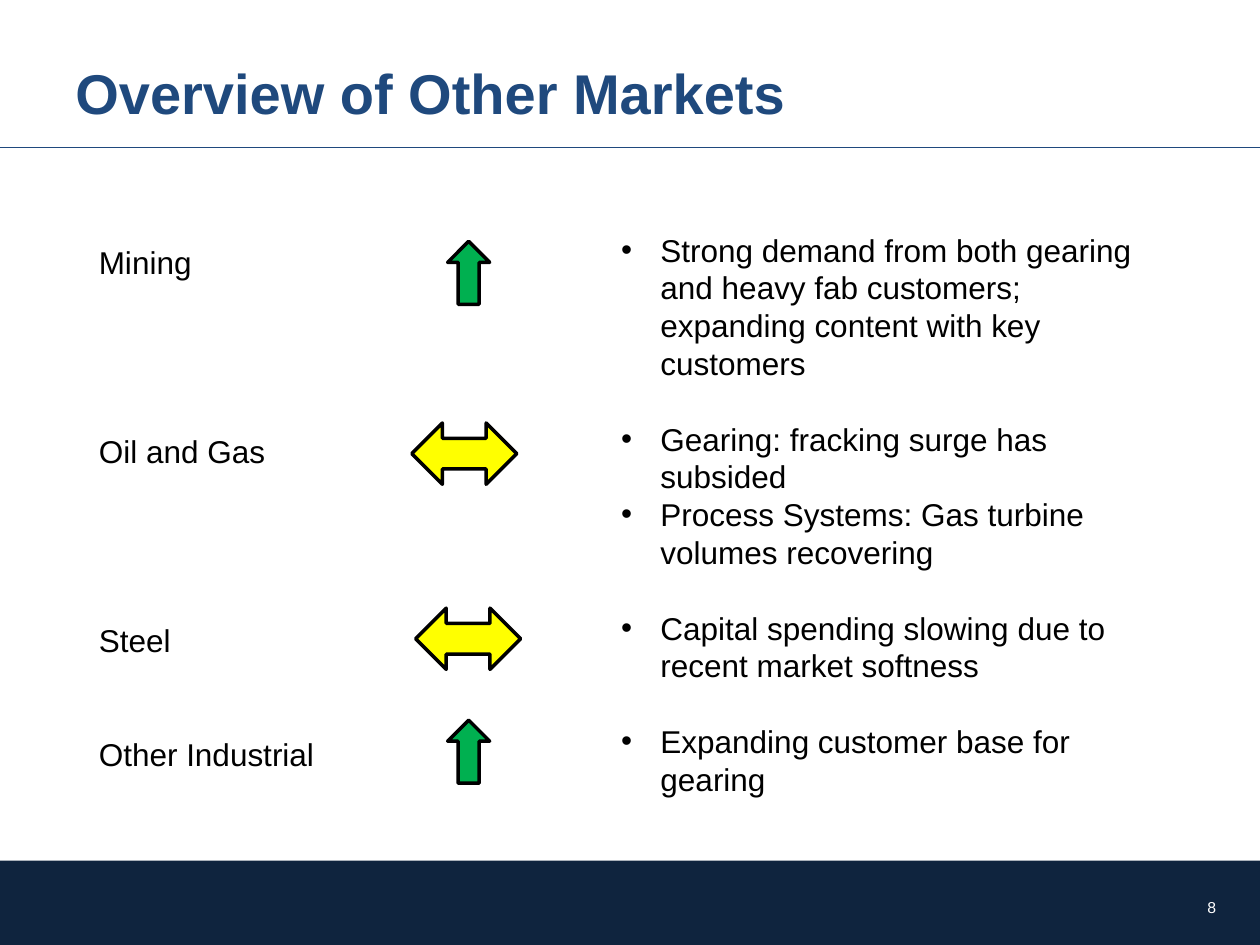
from dataclasses import dataclass

from lxml import etree
from pptx import Presentation
from pptx.dml.color import RGBColor
from pptx.enum.shapes import MSO_CONNECTOR, MSO_SHAPE
from pptx.enum.text import MSO_ANCHOR, PP_ALIGN
from pptx.oxml.ns import qn
from pptx.util import Pt

RECTANGLE = MSO_SHAPE.RECTANGLE
RIGHT_ARROW = MSO_SHAPE.RIGHT_ARROW
LEFT_RIGHT_ARROW = MSO_SHAPE.LEFT_RIGHT_ARROW
STRAIGHT = MSO_CONNECTOR.STRAIGHT
TOP, MIDDLE = MSO_ANCHOR.TOP, MSO_ANCHOR.MIDDLE
LEFT, RIGHT = PP_ALIGN.LEFT, PP_ALIGN.RIGHT


@dataclass(frozen=True)
class Theme:
    """Colours, type sizes and spacing of the deck."""
    font: str = "Arial"
    navy: RGBColor = RGBColor(0x0F, 0x24, 0x3E)
    blue: RGBColor = RGBColor(0x1F, 0x49, 0x7D)
    green: RGBColor = RGBColor(0x00, 0xB0, 0x50)
    yellow: RGBColor = RGBColor(0xFF, 0xFF, 0x00)
    black: RGBColor = RGBColor(0, 0, 0)
    white: RGBColor = RGBColor(0xFF, 0xFF, 0xFF)
    title_size: float = 32
    body_size: float = 18
    number_size: float = 9
    line_pitch: float = 21.6
    bullet_indent: float = 22.5


THEME = Theme()
SLIDE_WIDTH, SLIDE_HEIGHT = 720, 540

MARKETS = [
    ("Mining", "up",
     ["Strong demand from both gearing and heavy fab customers; "
      "expanding content with key customers"]),
    ("Oil and Gas", "flat",
     ["Gearing: fracking surge has subsided",
      "Process Systems: Gas turbine volumes recovering"]),
    ("Steel", "flat",
     ["Capital spending slowing due to recent market softness"]),
    ("Other Industrial", "up", ["Expanding customer base for gearing"]),
]
LINES_BETWEEN_LABELS = [0, 4, 4, 2]
TREND_CENTRES = [(267.8, 155.9), (265.3, 259.2), (267.5, 365), (267.8, 429.5)]
TRENDS = {
    "up": (RIGHT_ARROW, 36, 24, 270, THEME.green),
    "flat": (LEFT_RIGHT_ARROW, 60, 35, 0, THEME.yellow),
}


def add_text(slide, box, lines, size, color, bold=False, anchor=TOP, align=LEFT, wrap=True):
    """Place one text box with a paragraph per line and return its paragraphs."""
    frame = slide.shapes.add_textbox(*map(Pt, box)).text_frame
    frame.word_wrap = wrap
    frame.vertical_anchor = anchor
    frame.text = "\n".join(lines)
    for paragraph in frame.paragraphs:
        paragraph.alignment = align
        for run in paragraph.runs:
            run.font.name = THEME.font
            run.font.size = Pt(size)
            run.font.bold = bold
            run.font.color.rgb = color
    return frame.paragraphs


def add_body(slide, box, lines, gaps, wrap=True):
    """Place body text, with the given number of free lines before each paragraph."""
    paragraphs = add_text(slide, box, lines, THEME.body_size, THEME.black, wrap=wrap)
    for paragraph, gap in zip(paragraphs, gaps):
        paragraph.line_spacing = Pt(THEME.line_pitch)
        paragraph.space_before = Pt(gap * THEME.line_pitch)
    return paragraphs


def add_header(slide, box):
    """Place the title and the rule along the bottom of the header box."""
    left, top, width, height = box
    rule_y = Pt(top + height)
    rule = slide.shapes.add_connector(STRAIGHT, Pt(left), rule_y, Pt(left + width), rule_y)
    rule.line.color.rgb = THEME.blue
    rule.line.width = Pt(0.75)
    etree.SubElement(rule._element.spPr, qn("a:effectLst"))
    add_text(slide, (left + 36, top + 21.6, width - 72, height - 21.6),
             ["Overview of Other Markets"], THEME.title_size, THEME.blue,
             bold=True, anchor=MIDDLE)


def add_footer(slide, box):
    """Place the dark band and the page number at its right."""
    left, top, width, height = box
    band = slide.shapes.add_shape(RECTANGLE, *map(Pt, box))
    band.shadow.inherit = False
    band.fill.solid()
    band.fill.fore_color.rgb = THEME.navy
    band.line.fill.background()
    add_text(slide, (left + width - 54, top + 12.2, 36, 28.8), ["8"],
             THEME.number_size, THEME.white, anchor=MIDDLE, align=RIGHT)


def add_labels(slide, box):
    """Place the market names."""
    add_body(slide, box, [market for market, _, _ in MARKETS], LINES_BETWEEN_LABELS, wrap=False)


def add_trends(slide, box):
    """Place one trend arrow per market, centred relative to the box."""
    left, top, _, _ = box
    for (_, trend, _), (center_x, center_y) in zip(MARKETS, TREND_CENTRES):
        preset, width, height, rotation, color = TRENDS[trend]
        arrow = slide.shapes.add_shape(
            preset, Pt(left + center_x - 234 - width / 2),
            Pt(top + center_y - 135 - height / 2), Pt(width), Pt(height))
        arrow.rotation = rotation
        arrow.shadow.inherit = False
        arrow.fill.solid()
        arrow.fill.fore_color.rgb = color
        arrow.line.color.rgb = THEME.black
        arrow.line.width = Pt(2)


def add_notes_column(slide, box):
    """Place the bulleted remarks, one free line between markets."""
    remarks = [remark for _, _, group in MARKETS for remark in group]
    gaps = [int(row > 0 and index == 0)
            for row, (_, _, group) in enumerate(MARKETS) for index in range(len(group))]
    for paragraph in add_body(slide, box, remarks, gaps):
        properties = paragraph._p.get_or_add_pPr()
        indent = Pt(THEME.bullet_indent)
        properties.set("marL", str(indent))
        properties.set("indent", str(-indent))
        etree.SubElement(properties, qn("a:buFont")).set("typeface", THEME.font)
        etree.SubElement(properties, qn("a:buChar")).set("char", "•")


def main():
    """Build the market overview slide and save it."""
    deck = Presentation()
    deck.slide_width, deck.slide_height = Pt(SLIDE_WIDTH), Pt(SLIDE_HEIGHT)
    slide = deck.slides.add_slide(deck.slide_layouts[6])
    add_footer(slide, (0, 491.8, SLIDE_WIDTH, 48.2))
    add_header(slide, (0, 0, SLIDE_WIDTH, 84.2))
    add_labels(slide, (49.4, 135.4, 144, 312))
    add_trends(slide, (234, 135, 66, 312))
    add_notes_column(slide, (347.8, 128.2, 318.2, 334.8))
    deck.save("out.pptx")


if __name__ == "__main__":
    main()
